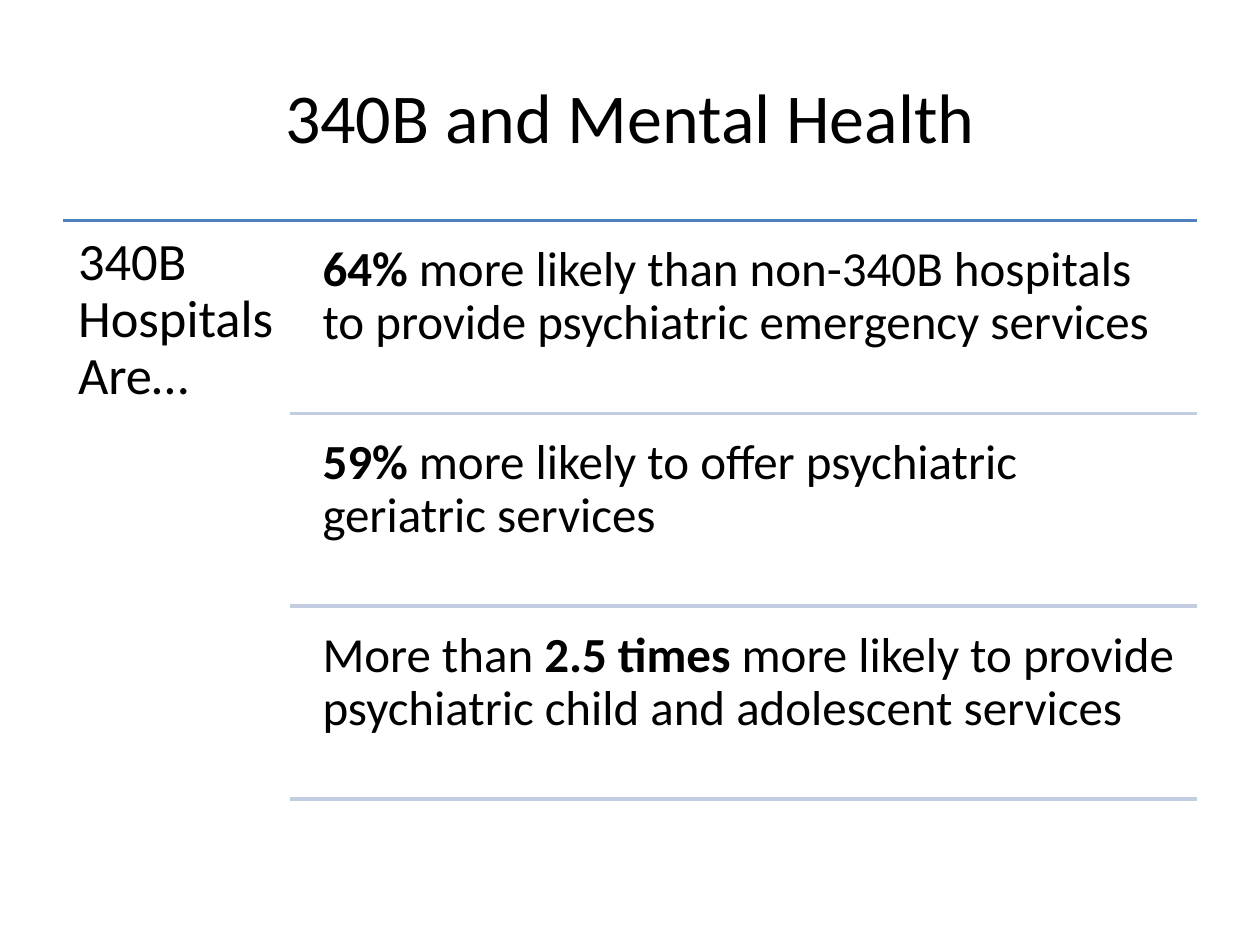
from dataclasses import dataclass

import pptx
import pptx.dml.color
import pptx.enum.shapes
import pptx.enum.text
import pptx.oxml.ns
import pptx.util
from lxml import etree
from pptx.util import Inches

ANCHOR = pptx.enum.text.MSO_ANCHOR
ALIGN = pptx.enum.text.PP_ALIGN


@dataclass(frozen=True)
class Theme:
    font: str = "Calibri"
    text: str = "000000"
    header_rule: str = "4F81BD"
    row_rule: str = "C2CDE1"
    title_size: int = 40
    label_size: int = 30
    finding_size: int = 28
    rule_width: int = 2


THEME = Theme()

# Each finding is a list of (words, bold) runs.
FINDINGS = [
    [("64% ", True),
     ("more likely than non-340B hospitals to provide psychiatric emergency services", False)],
    [("59%", True),
     (" more likely to offer psychiatric geriatric services", False)],
    [("More than ", False), ("2.5 times ", True),
     ("more likely to provide psychiatric child and adolescent services", False)],
]


def add_text(slide, runs, left, top, width, height, *, size, align=ALIGN.LEFT,
             anchor=ANCHOR.TOP, inset=Inches(0.12), line_spacing=0.9):
    """Add one paragraph made of (words, bold) runs."""
    frame = slide.shapes.add_textbox(left, top, width, height).text_frame
    frame.word_wrap = True
    frame.vertical_anchor = anchor
    frame.margin_left = frame.margin_right = inset
    frame.margin_top = frame.margin_bottom = inset
    paragraph = frame.paragraphs[0]
    paragraph.alignment = align
    paragraph.line_spacing = line_spacing
    for words, bold in runs:
        run = paragraph.add_run()
        run.text = words
        run.font.name = THEME.font
        run.font.size = pptx.util.Pt(size)
        run.font.bold = bold
        run.font.color.rgb = pptx.dml.color.RGBColor.from_string(THEME.text)


def add_rule(slide, left, right, y, color):
    rule = slide.shapes.add_connector(
        pptx.enum.shapes.MSO_CONNECTOR.STRAIGHT, left, y, right, y)
    rule.line.color.rgb = pptx.dml.color.RGBColor.from_string(color)
    rule.line.width = pptx.util.Pt(THEME.rule_width)
    etree.SubElement(rule._element.spPr, pptx.oxml.ns.qn("a:effectLst"))


def add_title(slide, left, top, width, height):
    add_text(slide, [("340B and Mental Health", False)], left, top, width, height,
             size=THEME.title_size, align=ALIGN.CENTER, anchor=ANCHOR.MIDDLE,
             inset=Inches(0.05), line_spacing=1.0)


def add_findings(slide, left, top, width, height):
    """A label column beside equal rows, each closed by a rule."""
    label_width = Inches(1.8)
    indent = Inches(0.14)
    gap = Inches(0.07)
    row_height = Inches(1.46)
    right = left + width

    add_rule(slide, left, right, top, THEME.header_rule)
    add_text(slide, [("340B Hospitals Are…", False)], left, top, label_width, height,
             size=THEME.label_size)
    for index, finding in enumerate(FINDINGS):
        row_top = top + gap + index * (row_height + gap)
        row_left = left + label_width
        add_text(slide, finding, row_left + indent, row_top,
                 right - row_left - indent, row_height, size=THEME.finding_size)
        add_rule(slide, row_left, right, row_top + row_height, THEME.row_rule)


def main():
    deck = pptx.Presentation()
    deck.slide_width = Inches(10)
    deck.slide_height = Inches(7.5)
    slide = deck.slides.add_slide(deck.slide_layouts[6])
    add_title(slide, Inches(0.5), Inches(0.33), Inches(9), Inches(1.17))
    add_findings(slide, Inches(0.5), Inches(1.75), Inches(9), Inches(4.67))
    deck.save("out.pptx")


if __name__ == "__main__":
    main()
